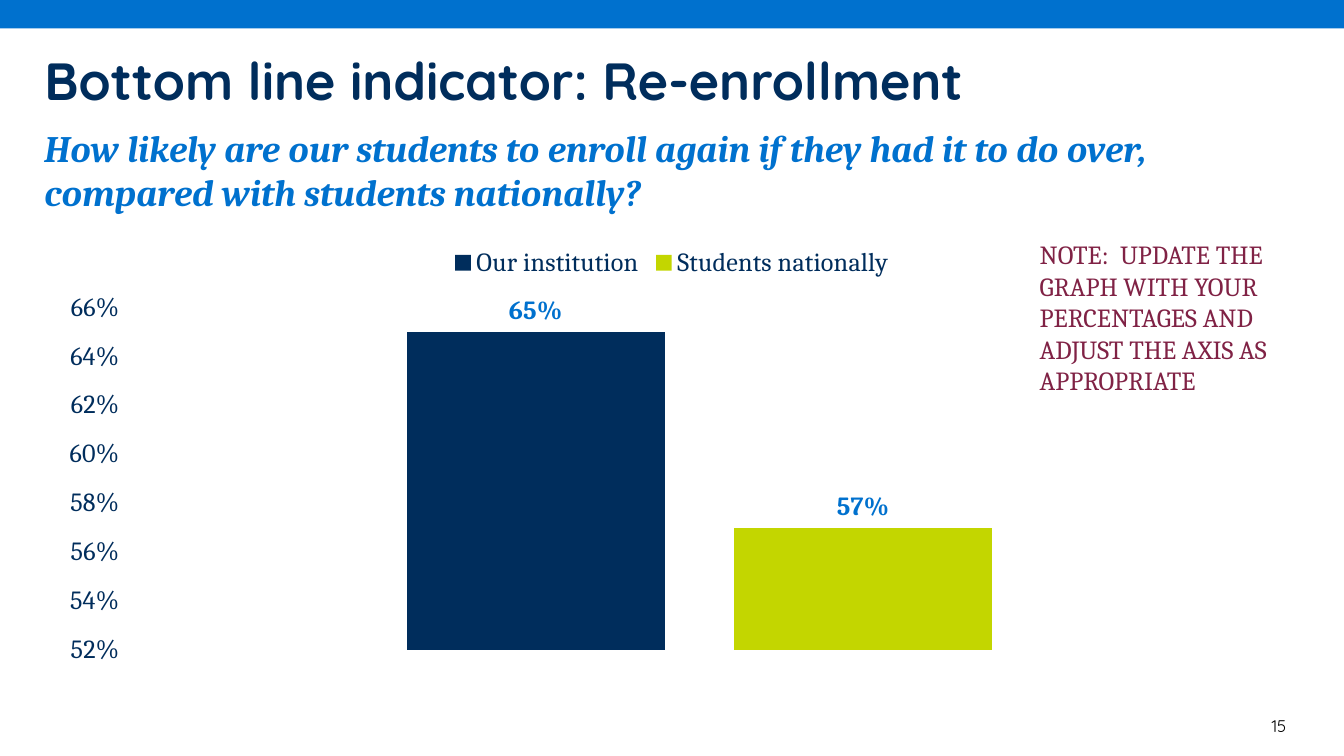
from dataclasses import dataclass

from pptx import Presentation
from pptx.chart.data import CategoryChartData
from pptx.dml.color import RGBColor
from pptx.enum.chart import XL_CHART_TYPE as ChartType
from pptx.enum.chart import XL_LABEL_POSITION as LabelPos
from pptx.enum.chart import XL_LEGEND_POSITION as LegendPos
from pptx.enum.chart import XL_TICK_MARK as TickMark
from pptx.enum.shapes import MSO_SHAPE as Shape
from pptx.enum.text import PP_ALIGN as Align
from pptx.util import Cm, Pt

NAVY = RGBColor(0x00, 0x2D, 0x5C)
BLUE = RGBColor(0x00, 0x71, 0xCE)
LIME = RGBColor(0xC3, 0xD6, 0x00)
MAROON = RGBColor(0x80, 0x22, 0x45)
BLACK = RGBColor(0x00, 0x00, 0x00)
HEADING = "Quicksand"
BODY = "Cambria"
PERCENT = "0%"
LEFT, WIDTH = 0.84, 23.72


@dataclass(frozen=True)
class Box:
    x: float
    y: float
    w: float
    h: float

    def lengths(self) -> tuple:
        return Cm(self.x), Cm(self.y), Cm(self.w), Cm(self.h)


@dataclass(frozen=True)
class Group:
    name: str
    share: float
    color: RGBColor


GROUPS = [
    Group("Our institution", 0.65, NAVY),
    Group("Students nationally", 0.57, LIME),
]


def set_font(font, *, size: float, color: RGBColor, name: str = BODY,
             bold: bool = False, italic: bool = False) -> None:
    font.name = name
    font.size = Pt(size)
    font.color.rgb = color
    font.bold = bold
    font.italic = italic


def add_text(s, box: Box, text: str, *, inset: bool = False,
             align: Align = Align.LEFT, **fmt) -> None:
    tf = s.shapes.add_textbox(*box.lengths()).text_frame
    tf.word_wrap = True
    if not inset:
        tf.margin_left = tf.margin_right = tf.margin_top = tf.margin_bottom = 0
    p = tf.paragraphs[0]
    p.alignment = align
    r = p.add_run()
    r.text = text
    set_font(r.font, **fmt)


def add_bar(s, box: Box, color: RGBColor) -> None:
    sp = s.shapes.add_shape(Shape.RECTANGLE, *box.lengths())
    sp.shadow.inherit = False
    sp.fill.solid()
    sp.fill.fore_color.rgb = color
    sp.line.fill.background()


def add_column_chart(s, box: Box, groups: list[Group]) -> None:
    data = CategoryChartData(number_format=PERCENT)
    data.categories = ["1"]
    for group in groups:
        data.add_series(group.name, [group.share])
    chart = s.shapes.add_chart(
        ChartType.COLUMN_CLUSTERED, *box.lengths(), data).chart
    set_font(chart.font, size=10, color=NAVY)
    chart.has_title = False
    chart.has_legend = True
    chart.legend.position = LegendPos.TOP
    chart.legend.include_in_layout = False
    set_font(chart.legend.font, size=14, color=NAVY)

    chart.category_axis.visible = False
    axis = chart.value_axis
    axis.minimum_scale, axis.maximum_scale, axis.major_unit = 0.52, 0.66, 0.02
    axis.has_major_gridlines = False
    axis.major_tick_mark = axis.minor_tick_mark = TickMark.NONE
    axis.format.line.fill.background()
    axis.tick_labels.number_format = PERCENT
    axis.tick_labels.number_format_is_linked = False
    set_font(axis.tick_labels.font, size=14, color=NAVY)

    plot = chart.plots[0]
    plot.gap_width, plot.overlap = 219, -27
    plot.vary_by_categories = False
    for series, group in zip(plot.series, groups):
        series.format.fill.solid()
        series.format.fill.fore_color.rgb = group.color
        labels = series.data_labels
        labels.show_value = True
        labels.position = LabelPos.OUTSIDE_END
        labels.number_format = PERCENT
        labels.number_format_is_linked = False
        set_font(labels.font, size=14, color=BLUE, bold=True)


def main() -> None:
    prs = Presentation()
    prs.slide_width, prs.slide_height = Cm(25.4), Cm(14.29)
    s = prs.slides.add_slide(prs.slide_layouts[6])

    add_text(s, Box(23.19, 13.41, 1.37, 0.64), "15", inset=True,
             align=Align.RIGHT, size=9, color=BLACK, name=HEADING)
    add_bar(s, Box(0, 0, 25.4, 0.54), BLUE)
    add_text(s, Box(LEFT, 2.36, WIDTH, 3),
             "How likely are our students to enroll again if they had it "
             "to do over, compared with students nationally?",
             size=20, color=BLUE, bold=True, italic=True)
    add_text(s, Box(LEFT, 0.91, WIDTH, 1.19),
             "Bottom line indicator: Re-enrollment",
             size=28, color=NAVY, name=HEADING, bold=True)
    add_column_chart(s, Box(LEFT, 4.39, WIDTH, 8.36), GROUPS)
    add_text(s, Box(19.4, 4.39, 5.72, 3.25),
             "NOTE:  UPDATE THE GRAPH WITH YOUR PERCENTAGES AND ADJUST "
             "THE AXIS AS APPROPRIATE",
             inset=True, size=14, color=MAROON)

    prs.save("out.pptx")


if __name__ == "__main__":
    main()
